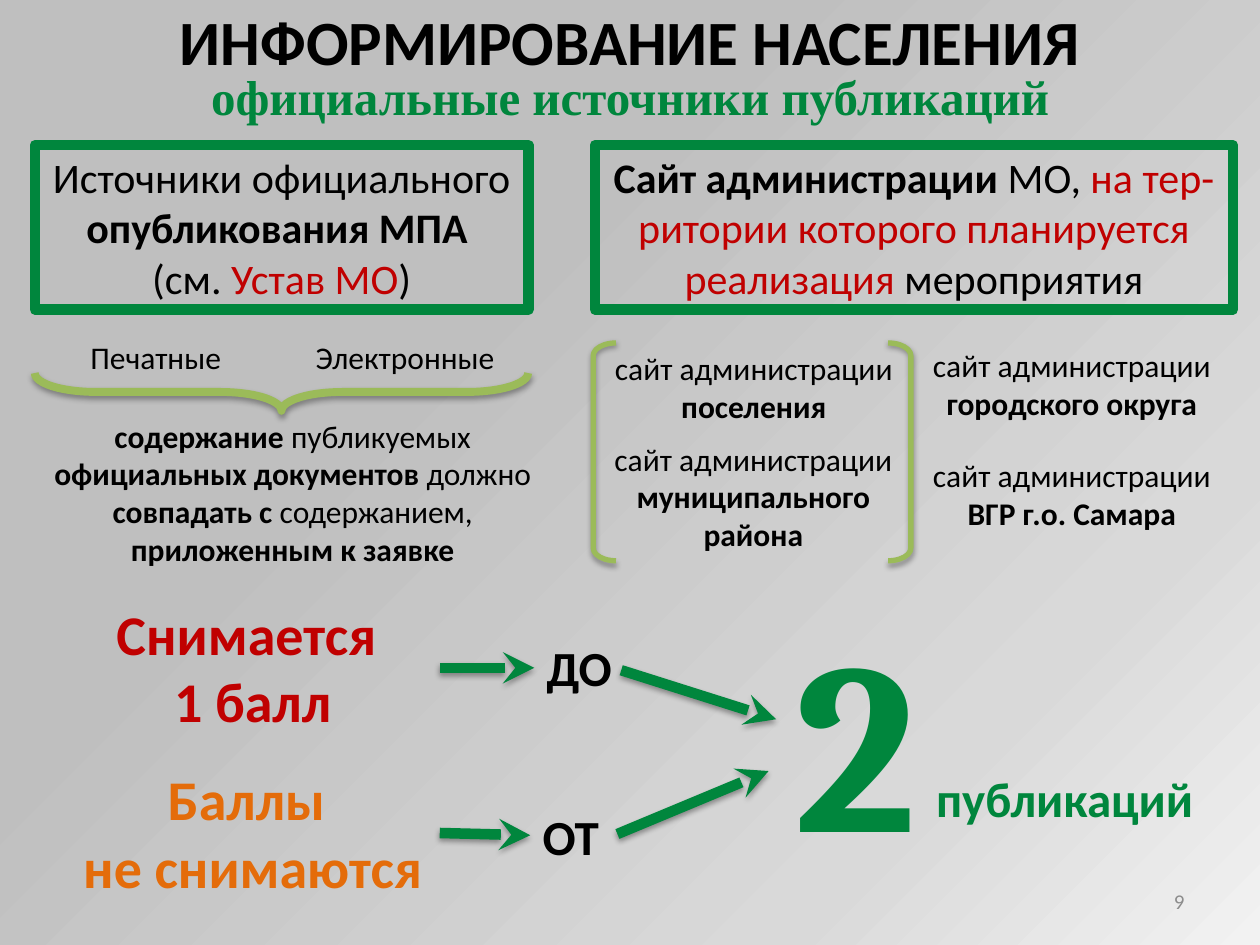
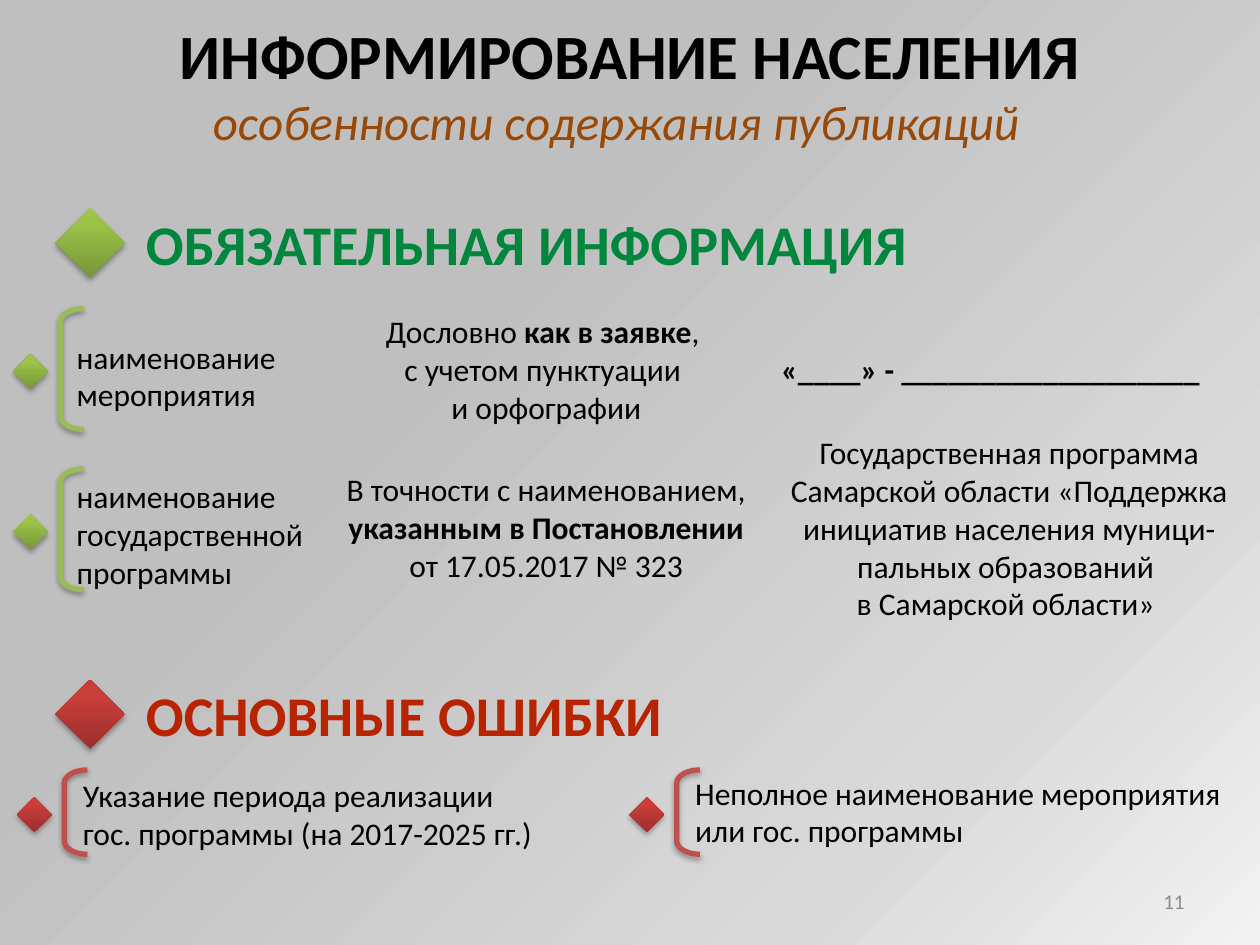
from pptx import Presentation
from pptx.dml.color import RGBColor
from pptx.enum.shapes import MSO_CONNECTOR, MSO_SHAPE
from pptx.enum.text import MSO_ANCHOR, MSO_AUTO_SIZE, PP_ALIGN
from pptx.oxml import parse_xml
from pptx.oxml.ns import nsdecls, qn
from pptx.util import Pt

LEFT, MID, RIGHT = PP_ALIGN.LEFT, PP_ALIGN.CENTER, PP_ALIGN.RIGHT
TOP, CENTRE = MSO_ANCHOR.TOP, MSO_ANCHOR.MIDDLE
GROW, FIXED = MSO_AUTO_SIZE.SHAPE_TO_FIT_TEXT, MSO_AUTO_SIZE.NONE
RECT, DIAMOND = MSO_SHAPE.RECTANGLE, MSO_SHAPE.DIAMOND
BRACKET, BRACE = MSO_SHAPE.RIGHT_BRACKET, MSO_SHAPE.RIGHT_BRACE
STRAIGHT = MSO_CONNECTOR.STRAIGHT

BLACK = RGBColor(0x00, 0x00, 0x00)
GREEN = RGBColor(0x00, 0x86, 0x3D)
LIME = RGBColor(0x9B, 0xBB, 0x59)
RED = RGBColor(0xC0, 0x00, 0x00)
ROSE = RGBColor(0xC0, 0x50, 0x4D)
BRICK = RGBColor(0xB8, 0x23, 0x00)
ORANGE = RGBColor(0xE4, 0x6C, 0x0A)
BROWN = RGBColor(0x98, 0x48, 0x07)
GREY = RGBColor(0x8C, 0x8C, 0x8C)

SHADOW = (f'<a:effectLst {nsdecls("a")}><a:outerShdw blurRad="40000" dist="23000" '
          'dir="5400000" rotWithShape="0"><a:srgbClr val="000000">'
          '<a:alpha val="35000"/></a:srgbClr></a:outerShdw></a:effectLst>')
TAIL = f'<a:tailEnd {nsdecls("a")} type="stealth"/>'
RISE = '<a:lin ang="16200000" scaled="0"/>'
CORNER = '<a:path path="circle"><a:fillToRect l="100000" t="100000"/></a:path>'
BLENDS = {}
for name, stops, way in (
    ("back", ((0, "F2F2F2"), (22, "D9D9D9"), (65, "BFBFBF")), CORNER),
    ("green", ((0, "779737"), (80, "9BC348"), (100, "9DC746")), RISE),
    ("red", ((0, "9C2F2D"), (80, "CB3E3A"), (100, "CE3B37")), RISE),
):
    marks = "".join(f'<a:gs pos="{pos * 1000}"><a:srgbClr val="{hue}"/></a:gs>'
                    for pos, hue in stops)
    BLENDS[name] = (f'<a:gradFill {nsdecls("a")} rotWithShape="1">'
                    f'<a:gsLst>{marks}</a:gsLst>{way}</a:gradFill>')


def write(slide, box, text, size=18, color=BLACK, accent=RED, bold=False, italic=False,
          font="Calibri", align=LEFT, anchor=TOP, wrap=True, fit=GROW, title=False):
    area = [Pt(n) for n in box]
    if title:
        item = slide.shapes.title
        item.left, item.top, item.width, item.height = area
    else:
        item = slide.shapes.add_textbox(*area)
    frame = item.text_frame
    frame.word_wrap, frame.auto_size, frame.vertical_anchor = wrap, fit, anchor
    for row, line in enumerate(text.split("\n")):
        para = frame.add_paragraph() if row else frame.paragraphs[0]
        para.alignment = align
        for i, part in enumerate(line.split("|")):
            for j, bit in enumerate(part.split("~")):
                if bit:
                    run = para.add_run()
                    run.text = bit
                    run.font.size, run.font.name = Pt(size), font
                    run.font.bold, run.font.italic = bold ^ bool(i % 2), italic
                    run.font.color.rgb = accent if j % 2 else color


def draw(slide, kind, box, color=None, width=3, blend=None, adjust=(), flip=False,
         turn=0, shade=True):
    item = slide.shapes.add_shape(kind, *[Pt(n) for n in box])
    props = item.element.spPr
    item.rotation = turn
    for i, ratio in enumerate(adjust):
        item.adjustments[i] = ratio
    if flip:
        props.xfrm.set("flipH", "1")
    item.fill.background()
    if blend:
        props.replace(props.find(qn("a:noFill")), parse_xml(BLENDS[blend]))
        item.line.fill.background()
    else:
        item.line.color.rgb = color
        item.line.width = Pt(width)
    if shade:
        props.append(parse_xml(SHADOW))
    else:
        item.shadow.inherit = False


deck = Presentation()
deck.slide_width, deck.slide_height = Pt(720), Pt(540)
master = deck.slide_master
master.background.fill.background()
back = master.element.find(".//" + qn("p:bgPr"))
back.replace(back[0], parse_xml(BLENDS["back"]))

pages = []
for number, top in (("9", -2), ("11", 6)):
    page = deck.slides.add_slide(deck.slide_layouts[5])
    write(page, (0, top, 720, 51), "ИНФОРМИРОВАНИЕ НАСЕЛЕНИЯ", size=36, bold=True,
          align=MID, fit=FIXED, title=True)
    write(page, (516, 500.5, 168, 28.8), number, size=12, color=GREY, align=RIGHT,
          anchor=CENTRE, fit=FIXED)
    pages.append(page)
first, second = pages

write(first, (29.5, 34.5, 661, 41), "официальные источники публикаций", size=28,
      color=GREEN, bold=True, font="Times New Roman", align=MID)

for left, width, text in (
    (20, 282, "Источники официального |опубликования МПА |\n(см. ~Устав МО~)"),
    (340, 364.5, "|Сайт администрации |МО, ~на тер-ритории которого планируется "
                 "реализация~ мероприятия"),
):
    write(first, (left, 83, width, 94), text, size=24, align=MID)
    draw(first, RECT, (left, 83, width, 94), GREEN, width=6, shade=False)

for box, text in (
    ((17.5, 189.5, 143, 29), "Печатные"),
    ((161, 189.5, 141, 29), "Электронные"),
    ((20, 234.5, 294.5, 94), "|содержание| публикуемых |официальных документов |должно "
                             "|совпадать с| содержанием, |приложенным к заявке|"),
    ((339, 196, 183.5, 51), "сайт администрации |поселения|"),
    ((340.5, 247.7, 180, 73), "сайт администрации |муниципального района|"),
    ((522.5, 194, 180, 51), "сайт администрации |городского округа|"),
    ((522.5, 257, 180, 51), "сайт администрации |ВГР г.о. Самара|"),
):
    write(first, box, text, align=MID)

draw(first, BRACE, (150, 83, 21.6, 282), LIME, width=4.5, adjust=(1.617, 0.5), turn=90)
for left, flip in ((339, True), (507.5, False)):
    draw(first, BRACKET, (left, 196, 13, 124.5), LIME, adjust=(0.56,), flip=flip)

for top, text, color in ((339, "Снимается \n1 балл", RED),
                         (433.5, "Баллы \nне снимаются", ORANGE)):
    write(first, (37.5, top, 214, 85), text, size=32, color=color, bold=True, align=MID)

write(first, (305.3, 360.7, 57, 41), "ДО", size=28, bold=True)
write(first, (303, 457.2, 47, 41), "ОТ", size=28, bold=True, wrap=False)
write(first, (447, 334, 85, 174), "2", size=138, color=GREEN, bold=True,
      font="Cambria", wrap=False)
write(first, (527.8, 435.6, 163.5, 41), "публикаций", size=28, color=GREEN, bold=True,
      wrap=False)

for ends in ((251.3, 381.6, 305.3, 381.6), (251.3, 476, 303, 477.3),
             (355, 383, 443.5, 411), (352.8, 476.6, 439.2, 440.6)):
    arrow = first.shapes.add_connector(STRAIGHT, *[Pt(n) for n in ends])
    arrow.line.color.rgb = GREEN
    arrow.line.width = Pt(6)
    props = arrow.element.spPr
    props.find(qn("a:ln")).append(parse_xml(TAIL))
    props.append(parse_xml(SHADOW))

write(second, (114.5, 49, 492, 41), "особенности содержания публикаций", size=28,
      color=BROWN, italic=True, wrap=False)

for top, width, text, color, blend in (
    (116, 471, "ОБЯЗАТЕЛЬНАЯ ИНФОРМАЦИЯ", GREEN, "green"),
    (385.3, 312.5, "ОСНОВНЫЕ ОШИБКИ", BRICK, "red"),
):
    write(second, (76.3, top, width, 46), text, size=32, color=color, bold=True, wrap=False)
    draw(second, DIAMOND, (31.7, top + 3, 39.6, 39.6), blend=blend)

for left, top, height, color, blend in (
    (34.5, 176.4, 69, LIME, "green"),
    (34.5, 268, 69, LIME, "green"),
    (36.7, 440, 48.2, ROSE, "red"),
    (386.7, 440, 48.2, ROSE, "red"),
):
    draw(second, BRACKET, (left, top, 13.3, height), color, adjust=(0.56,), flip=True)
    draw(second, DIAMOND, (left - 27, top + height / 2 - 8.5, 20, 20), blend=blend)

for box, text, align in (
    ((36.7, 189.4, 147.6, 51), "наименование мероприятия", LEFT),
    ((36.7, 269.3, 147.6, 73), "наименование государственной программы", LEFT),
    ((186.5, 175, 251.3, 73),
     "Дословно |как в заявке|, \nс учетом пунктуации \nи орфографии", MID),
    ((186.5, 265, 251.3, 73),
     "В точности с наименованием, |указанным в Постановлении |от 17.05.2017 № 323", MID),
    ((439.2, 196.6, 260.6, 29), "|«____» - ___________________|", LEFT),
    ((439.2, 244, 275, 116.6),
     "Государственная программа Самарской области «Поддержка инициатив населения "
     "муници-пальных образований \nв Самарской области» ", MID),
    ((40.3, 440, 296, 51),
     "Указание периода реализации \nгос. программы (на 2017-2025 гг.)", LEFT),
    ((390.2, 438.5, 324, 51), "Неполное наименование мероприятия или гос. программы", LEFT),
):
    write(second, box, text, align=align)

deck.save("out.pptx")
